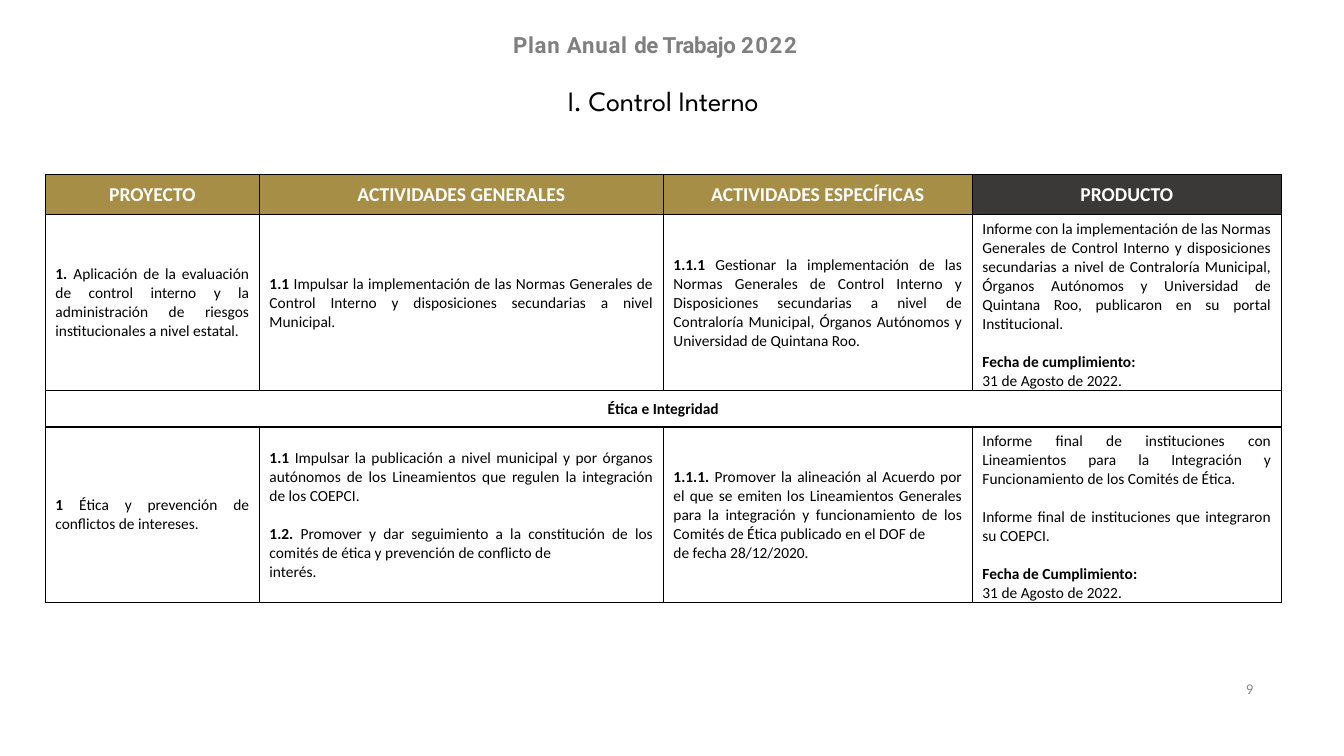
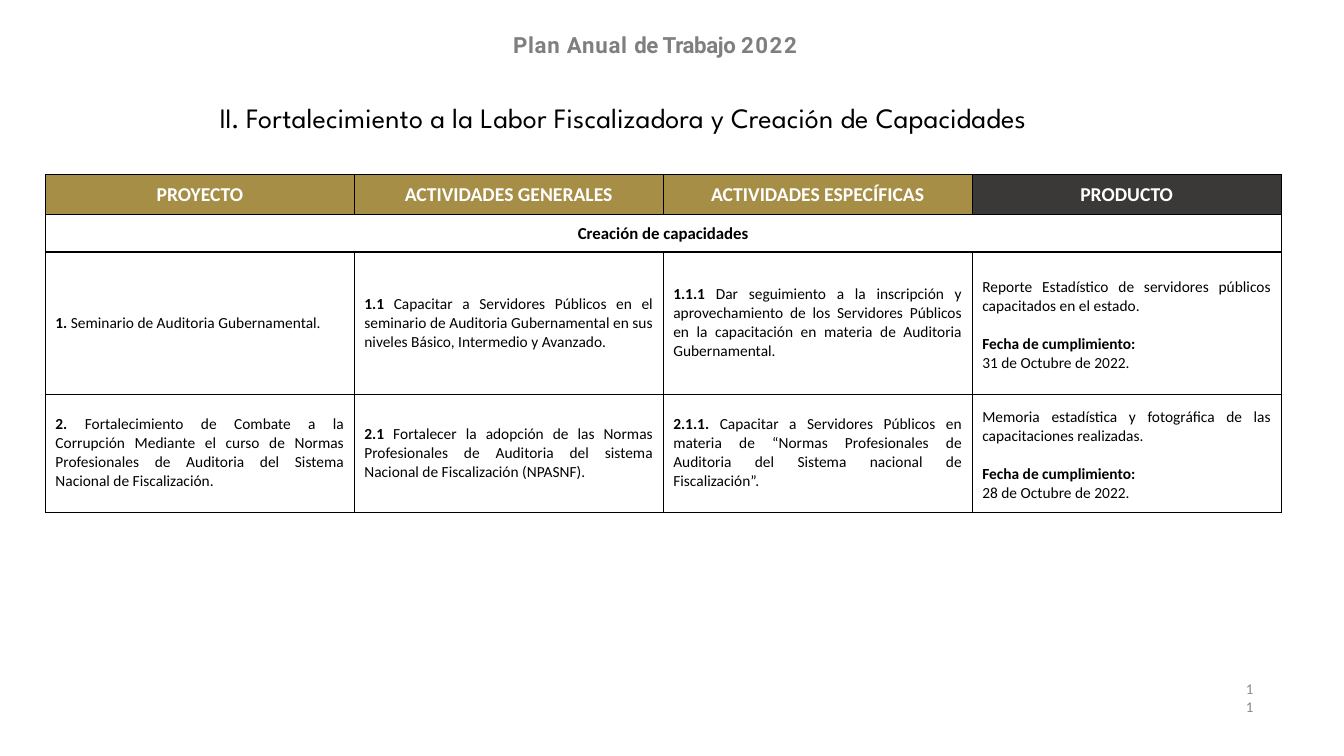
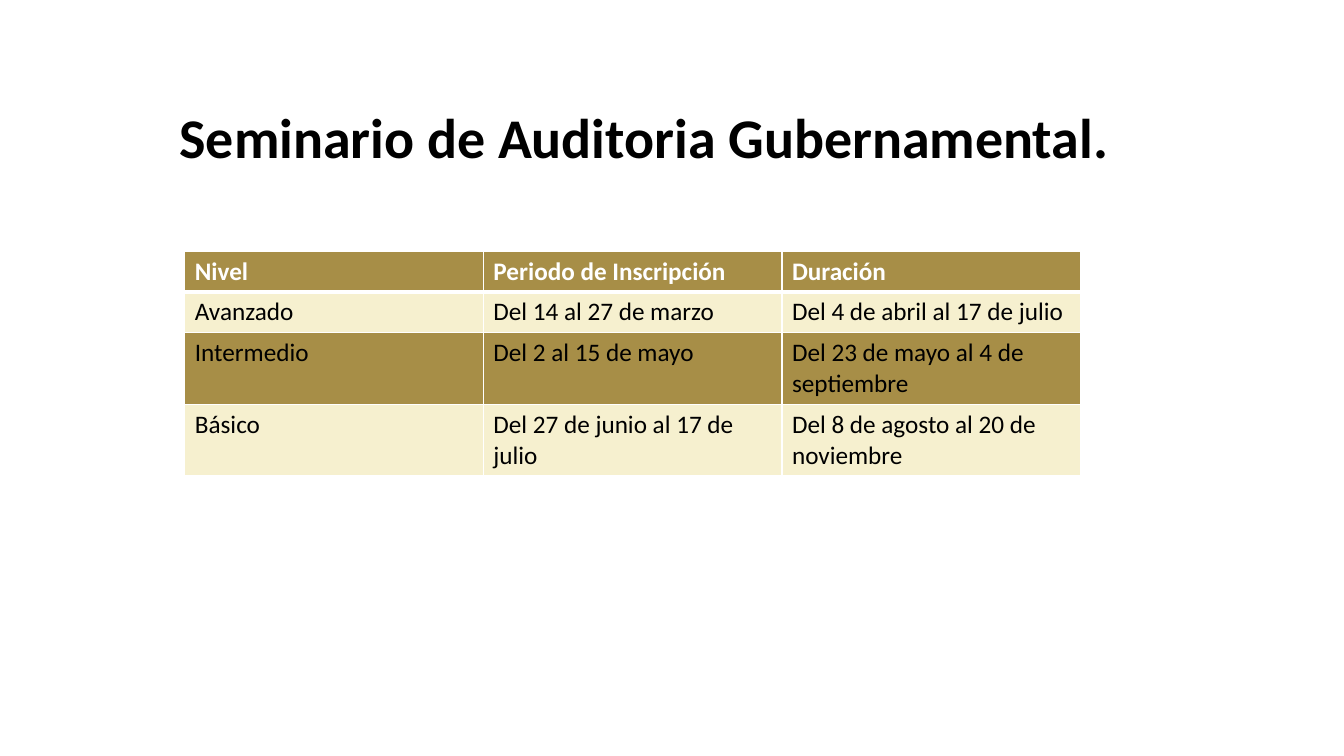
from lxml import etree
from pptx import Presentation
from pptx.dml.color import RGBColor
from pptx.enum import text
from pptx.oxml import ns
from pptx.util import Pt

COLORS = {
    "gold": "A78E47",
    "charcoal": "3B3838",
    "cream": "F6F0CF",
    "white": "FFFFFF",
    "black": "000000",
    "header": "7F7F7F",
    "number": "898989",
}
BODY_FONT, TITLE_FONT, HEADER_FONT = "Calibri", "League Spartan", "Roboto"
BLANK_LINE = 13.4
PLAN_LEFT, PLAN_TOP = 32.4, 124.8
PLAN_HEADINGS = ["PROYECTO", "ACTIVIDADES GENERALES", "ACTIVIDADES ESPECÍFICAS", "PRODUCTO"]

# In cells, ** switches bold, a line break starts a paragraph and two leave a gap.
# A row with a single cell is a section heading across the table.
PLANS = [
    {
        "title": [("I. ", -0.5), ("Control Interno", -0.1)],
        "title_box": (247.7, 58.3, 452.2, 25.2),
        "number": "9",
        "widths": [152.9, 288.6, 220.7, 220.7],
        "heights": [28.6, 125.7, 25.9, 125.7],
        "section_size": 11,
        "rows": [
            [
                "**1. **Aplicación de la evaluación de control interno y la administración de "
                "riesgos institucionales a nivel estatal.",
                "**1.1** Impulsar la implementación de las Normas Generales de Control Interno y "
                "disposiciones secundarias a nivel Municipal.",
                "**1.1.1 **Gestionar la implementación de las Normas Generales de Control Interno "
                "y Disposiciones secundarias a nivel de Contraloría Municipal, Órganos Autónomos "
                "y Universidad de Quintana Roo.",
                "Informe con la implementación de las Normas Generales de Control Interno y "
                "disposiciones secundarias a nivel de Contraloría Municipal, Órganos Autónomos y "
                "Universidad de Quintana Roo, publicaron en su portal Institucional.\n\n"
                "**Fecha de cumplimiento:**\n31 de Agosto de 2022.",
            ],
            ["Ética e Integridad"],
            [
                "**1 **Ética y prevención de conflictos de intereses.",
                "**1.1 **Impulsar la publicación a nivel municipal y por órganos autónomos de los "
                "Lineamientos que regulen la integración de los COEPCI.\n\n"
                "**1.2. **Promover y dar seguimiento a la constitución de los comités de ética y "
                "prevención de conflicto de\ninterés.",
                "**1.1.1. **Promover la alineación al Acuerdo por el que se emiten los "
                "Lineamientos Generales para la integración y funcionamiento de los Comités de "
                "Ética publicado en el DOF de\nde fecha 28/12/2020.",
                "Informe final de instituciones con Lineamientos para la Integración y "
                "Funcionamiento de los Comités de Ética.\n\n"
                "Informe final de instituciones que integraron su COEPCI.\n\n"
                "**Fecha de Cumplimiento:**\n31 de Agosto de 2022.",
            ],
        ],
    },
    {
        "title": [
            ("II. ", -0.5),
            ("Fortalecimiento a la Labor Fiscalizadora y Creación de Capacidades", 0.1),
        ],
        "title_box": (126.7, 58.3, 637.2, 49.7),
        "number": "11",
        "widths": [220.7] * 4,
        "heights": [28.6, 26.7, 101.5, 84.3],
        "section_size": 12,
        "rows": [
            ["Creación de capacidades"],
            [
                "**1.** Seminario de Auditoria Gubernamental.",
                "**1.1 **Capacitar a Servidores Públicos en el seminario de Auditoria "
                "Gubernamental en sus niveles Básico, Intermedio y Avanzado.",
                "**1.1.1 **Dar seguimiento a la inscripción y aprovechamiento de los Servidores "
                "Públicos en la capacitación en materia de Auditoria Gubernamental.",
                "Reporte Estadístico de servidores públicos capacitados en el estado.\n\n"
                "**Fecha de cumplimiento:**\n31 de Octubre de 2022.",
            ],
            [
                "**2.** Fortalecimiento de Combate a la Corrupción Mediante el curso de Normas "
                "Profesionales de Auditoria del Sistema Nacional de Fiscalización.",
                "**2.1 **Fortalecer la adopción de las Normas Profesionales de Auditoria del "
                "sistema Nacional de Fiscalización (NPASNF).",
                "**2.1.1. **Capacitar a Servidores Públicos en materia de “Normas Profesionales "
                "de Auditoria del Sistema nacional de Fiscalización”.",
                "Memoria estadística y fotográfica de las capacitaciones realizadas.\n\n"
                "**Fecha de cumplimiento:**\n28 de Octubre de 2022.",
            ],
        ],
    },
]

SEMINAR_ROWS = [
    ["Nivel", "Periodo de Inscripción", "Duración"],
    ["Avanzado", "Del 14 al 27 de marzo", "Del 4 de abril al 17 de julio"],
    ["Intermedio", "Del 2 al 15 de mayo", "Del 23 de mayo al 4 de septiembre"],
    ["Básico", "Del 27 de junio al 17 de julio", "Del 8 de agosto al 20 de noviembre"],
]


def points(box):
    return [Pt(value) for value in box]


# Text helpers
def style_paragraph(paragraph, font, size, color, align=text.PP_ALIGN.LEFT, bold=False):
    paragraph.alignment = align
    paragraph.font.name = font
    paragraph.font.size = Pt(size)
    paragraph.font.bold = bold
    paragraph.font.color.rgb = RGBColor.from_string(COLORS[color])


def add_spaced_runs(paragraph, parts):
    for words, spacing in parts:
        run = paragraph.add_run()
        run.text = words
        run._r.get_or_add_rPr().set("spc", str(round(spacing * 100)))


def clear_insets(frame, top=0):
    frame.margin_left = frame.margin_right = frame.margin_bottom = 0
    frame.margin_top = Pt(top)
    frame.word_wrap = True


def add_text_frame(slide, box, top=0):
    frame = slide.shapes.add_textbox(*points(box)).text_frame
    clear_insets(frame, top)
    return frame


def place_title(slide, box):
    title = slide.shapes.title
    title.left, title.top, title.width, title.height = points(box)
    frame = title.text_frame
    frame.auto_size = text.MSO_AUTO_SIZE.NONE
    frame.vertical_anchor = text.MSO_ANCHOR.MIDDLE
    return frame


# Table helpers
def add_plain_table(slide, left, top, widths, heights):
    box = (left, top, sum(widths), sum(heights))
    table = slide.shapes.add_table(len(heights), len(widths), *points(box)).table
    table.first_row = table.horz_banding = False
    for column, width in zip(table.columns, widths):
        column.width = Pt(width)
    for row, height in zip(table.rows, heights):
        row.height = Pt(height)
    return table


def format_cell(cell, fill, line, top=1, bottom=1):
    properties = cell._tc.get_or_add_tcPr()
    for side, width in (("L", 1), ("R", 1), ("T", top), ("B", bottom)):
        border = etree.SubElement(properties, ns.qn("a:ln" + side), w=str(Pt(width)))
        solid = etree.SubElement(border, ns.qn("a:solidFill"))
        etree.SubElement(solid, ns.qn("a:srgbClr"), val=COLORS[line])
    cell.fill.solid()
    cell.fill.fore_color.rgb = RGBColor.from_string(COLORS[fill])


def write_cell(cell, words, size, color, align=text.PP_ALIGN.LEFT, bold=False):
    frame = cell.text_frame
    first = True
    for block in words.split("\n\n"):
        for index, line in enumerate(block.split("\n")):
            paragraph = frame.paragraphs[0] if first else frame.add_paragraph()
            style_paragraph(paragraph, BODY_FONT, size, color, align, bold)
            if index == 0 and not first:
                paragraph.space_before = Pt(BLANK_LINE)
            for position, part in enumerate(line.split("**")):
                if part:
                    run = paragraph.add_run()
                    run.text = part
                    run.font.bold = bold or position % 2 == 1
            first = False


# Work plan slides
def add_plan_header(slide, box):
    paragraph = add_text_frame(slide, box, top=0.9).paragraphs[0]
    style_paragraph(paragraph, HEADER_FONT, 15.9, "header", bold=True)
    add_spaced_runs(paragraph, [("Plan Anual ", 0.5), ("de Trabajo ", -0.3), ("2022", 1.1)])


def add_plan_title(slide, box, parts):
    frame = place_title(slide, box)
    clear_insets(frame, top=0.9)
    style_paragraph(frame.paragraphs[0], TITLE_FONT, 20, "black", text.PP_ALIGN.CENTER)
    add_spaced_runs(frame.paragraphs[0], parts)


def add_page_number(slide, box, number):
    frame = add_text_frame(slide, box)
    frame.margin_left = Pt(3)
    frame.text = number
    style_paragraph(frame.paragraphs[0], BODY_FONT, 10.6, "number")


def add_plan_table(slide, left, top, plan):
    table = add_plain_table(slide, left, top, plan["widths"], plan["heights"])
    last = len(PLAN_HEADINGS) - 1
    for row, values in enumerate([PLAN_HEADINGS] + plan["rows"]):
        for column in range(last + 1):
            cell = table.cell(row, column)
            heading_fill = "charcoal" if column == last else "gold"
            format_cell(cell, "white" if row else heading_fill, "black")
            cell.vertical_anchor = text.MSO_ANCHOR.MIDDLE
            if row and column == last:
                cell.margin_bottom = Pt(1)
        if len(values) == 1:
            table.cell(row, 0).merge(table.cell(row, last))
        for column, words in enumerate(values):
            cell = table.cell(row, column)
            if row == 0:
                write_cell(cell, words, 14, "white", text.PP_ALIGN.CENTER, bold=True)
            elif len(values) == 1:
                size = plan["section_size"]
                write_cell(cell, words, size, "black", text.PP_ALIGN.CENTER, bold=True)
            else:
                write_cell(cell, words, 11, "black", text.PP_ALIGN.JUSTIFY)


def build_plan_slide(slide, plan):
    add_plan_header(slide, (366.5, 21.6, 216, 20.2))
    add_plan_title(slide, plan["title_box"], plan["title"])
    add_page_number(slide, (887, 485.3, 10.8, 51.8), plan["number"])
    add_plan_table(slide, PLAN_LEFT, PLAN_TOP, plan)


# Seminar slide
def add_seminar_table(slide, left, top):
    table = add_plain_table(slide, left, top, [213.3] * 3, [29.2, 29.2, 51, 51])
    for row, values in enumerate(SEMINAR_ROWS):
        for column, words in enumerate(values):
            cell = table.cell(row, column)
            format_cell(
                cell,
                "cream" if row % 2 else "gold",
                "white",
                top=3 if row == 1 else 1,
                bottom=3 if row == 0 else 1,
            )
            write_cell(cell, words, 18, "black" if row else "white", bold=row == 0)


def build_seminar_slide(slide):
    frame = place_title(slide, (121, 56.9, 707, 86.4))
    frame.text = "Seminario de Auditoria Gubernamental."
    style_paragraph(frame.paragraphs[0], BODY_FONT, 40, "black", bold=True)
    frame.paragraphs[0].line_spacing = 0.9
    add_seminar_table(slide, 132, 179.3)


def main():
    presentation = Presentation()
    presentation.slide_width, presentation.slide_height = Pt(960), Pt(540)
    title_only = presentation.slide_layouts[5]
    for plan in PLANS:
        build_plan_slide(presentation.slides.add_slide(title_only), plan)
    build_seminar_slide(presentation.slides.add_slide(title_only))
    presentation.save("out.pptx")


if __name__ == "__main__":
    main()
